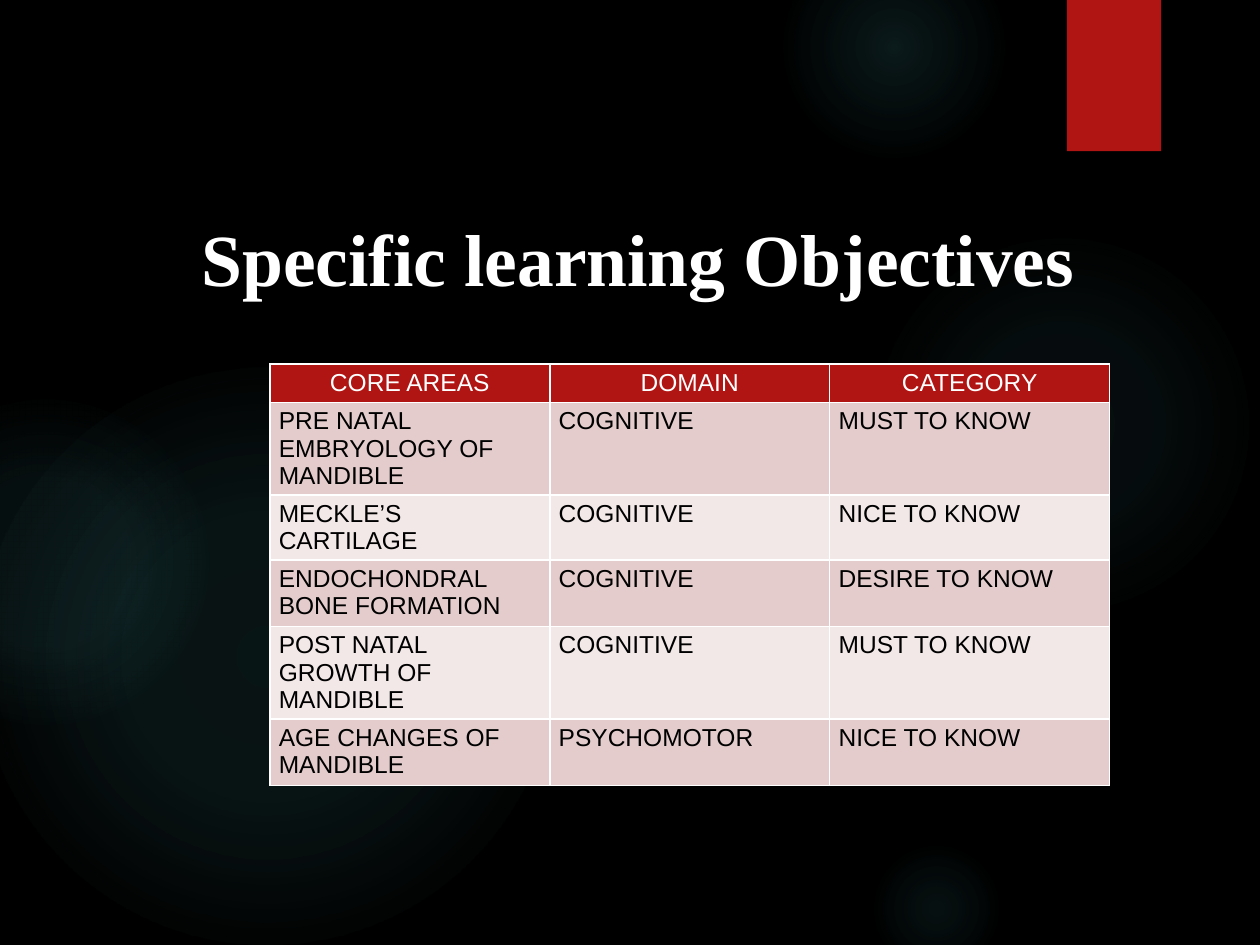
from lxml import etree
from pptx import Presentation
from pptx import util as u
from pptx.dml.color import RGBColor
from pptx.enum import shapes, text
from pptx.oxml.ns import qn

BLACK = RGBColor(0x00, 0x00, 0x00)
WHITE = RGBColor(0xFF, 0xFF, 0xFF)
RED = RGBColor(0xB0, 0x15, 0x13)
TEAL = RGBColor(0x50, 0xB9, 0xC1)
DARK_BAND = RGBColor(0xE4, 0xCC, 0xCC)
LIGHT_BAND = RGBColor(0xF2, 0xE8, 0xE7)

GLOWS = [
    (17.5, 4.65, 7.82, [(0, 7), (36, 6), (69, 0)]),
    (15.8, -1.27, 4.45, [(0, 14), (36, 7), (73, 0)]),
    (17.5, 16.94, 2.74, [(0, 9), (36, 5), (66, 0)]),
    (-0.43, 7.42, 11.63, [(0, 11), (36, 10), (75, 0)]),
    (-2.34, 8.05, 6.55, [(0, 8), (36, 8), (72, 0)]),
]
OBJECTIVES = [
    ("CORE AREAS", "DOMAIN", "CATEGORY"),
    ("PRE NATAL EMBRYOLOGY OF MANDIBLE", "COGNITIVE", "MUST TO KNOW"),
    ("MECKLE’S CARTILAGE", "COGNITIVE", "NICE TO KNOW"),
    ("ENDOCHONDRAL BONE FORMATION", "COGNITIVE", "DESIRE TO KNOW"),
    ("POST NATAL GROWTH OF MANDIBLE", "COGNITIVE", "MUST TO KNOW"),
    ("AGE CHANGES OF MANDIBLE", "PSYCHOMOTOR", "NICE TO KNOW"),
]
ROW_HEIGHTS = [0.77, 1.85, 1.31, 1.34, 1.85, 1.34]


def add_child(parent, tag, **attributes):
    return etree.SubElement(parent, qn(tag), {k: str(v) for k, v in attributes.items()})


def add_run(paragraph, words, font_name, size, color, bold=False):
    run = paragraph.add_run()
    run.text = words
    run.font.name = font_name
    run.font.size = u.Pt(size)
    run.font.color.rgb = color
    run.font.bold = bold


def add_plain_shape(slide, preset, left, top, width, height):
    shape = slide.shapes.add_shape(preset, left, top, width, height)
    shape.shadow.inherit = False
    shape.line.fill.background()
    return shape


def set_glow(shape, stops):
    shape.fill.gradient()
    gradient = shape.fill._xPr.find(qn("a:gradFill"))
    for child in list(gradient):
        gradient.remove(child)
    stop_list = add_child(gradient, "a:gsLst")
    for position, opacity in stops:
        stop = add_child(stop_list, "a:gs", pos=position * 1000)
        color = add_child(stop, "a:srgbClr", val=TEAL)
        add_child(color, "a:alpha", val=opacity * 1000)
    focus = add_child(gradient, "a:path", path="circle")
    add_child(focus, "a:fillToRect", l=50000, t=50000, r=50000, b=50000)


def add_backdrop(slide, left, top):
    slide.background.fill.solid()
    slide.background.fill.fore_color.rgb = BLACK
    for x, y, diameter, stops in GLOWS:
        glow = add_plain_shape(slide, shapes.MSO_SHAPE.OVAL, left + u.Cm(x), top + u.Cm(y),
                               u.Cm(diameter), u.Cm(diameter))
        set_glow(glow, stops)
    tab = add_plain_shape(slide, shapes.MSO_SHAPE.RECTANGLE, left + u.Cm(21.51), top,
                          u.Cm(1.9), u.Cm(3.05))
    tab.fill.solid()
    tab.fill.fore_color.rgb = RED


def place_title(slide, left, top, width, height):
    title = slide.shapes.title
    slide.shapes._spTree.append(title._element)
    title.left, title.top, title.width, title.height = left, top, width, height
    frame = title.text_frame
    frame.word_wrap = True
    frame.auto_size = text.MSO_AUTO_SIZE.NONE
    frame.vertical_anchor = text.MSO_ANCHOR.MIDDLE
    paragraph = frame.paragraphs[0]
    paragraph.alignment = text.PP_ALIGN.CENTER
    add_run(paragraph, "Specific learning Objectives ", "Times New Roman", 42, WHITE, bold=True)


def set_borders(cell):
    properties = cell._tc.get_or_add_tcPr()
    for index, side in enumerate(("a:lnL", "a:lnR", "a:lnT", "a:lnB")):
        line = etree.Element(qn(side), {"w": str(u.Pt(1))})
        add_child(add_child(line, "a:solidFill"), "a:srgbClr", val=WHITE)
        properties.insert(index, line)


def format_cell(cell, words, is_header, fill):
    cell.margin_left = cell.margin_right = u.Cm(0.18)
    cell.margin_top = cell.margin_bottom = u.Cm(0.1)
    cell.fill.solid()
    cell.fill.fore_color.rgb = fill
    set_borders(cell)
    paragraph = cell.text_frame.paragraphs[0]
    paragraph.alignment = text.PP_ALIGN.CENTER if is_header else text.PP_ALIGN.LEFT
    add_run(paragraph, words, "Arial", 14, WHITE if is_header else BLACK)


def add_objectives_table(slide, left, top, width):
    height = u.Cm(sum(ROW_HEIGHTS))
    columns = len(OBJECTIVES[0])
    table = slide.shapes.add_table(len(OBJECTIVES), columns, left, top, width, height).table
    table.horz_banding = False
    for column in table.columns:
        column.width = width // columns
    for index, (row, row_height) in enumerate(zip(table.rows, ROW_HEIGHTS)):
        row.height = u.Cm(row_height)
        is_header = index == 0
        fill = RED if is_header else DARK_BAND if index % 2 else LIGHT_BAND
        for cell, words in zip(row.cells, OBJECTIVES[index]):
            format_cell(cell, words, is_header, fill)


def main():
    presentation = Presentation()
    presentation.slide_width = u.Cm(25.4)
    presentation.slide_height = u.Cm(19.05)
    slide = presentation.slides.add_slide(presentation.slide_layouts[5])
    add_backdrop(slide, u.Cm(0), u.Cm(0))
    place_title(slide, u.Cm(3.4), u.Cm(4.04), u.Cm(19.3), u.Cm(2.29))
    add_objectives_table(slide, u.Cm(5.44), u.Cm(7.34), u.Cm(16.93))
    presentation.save("out.pptx")


if __name__ == "__main__":
    main()
